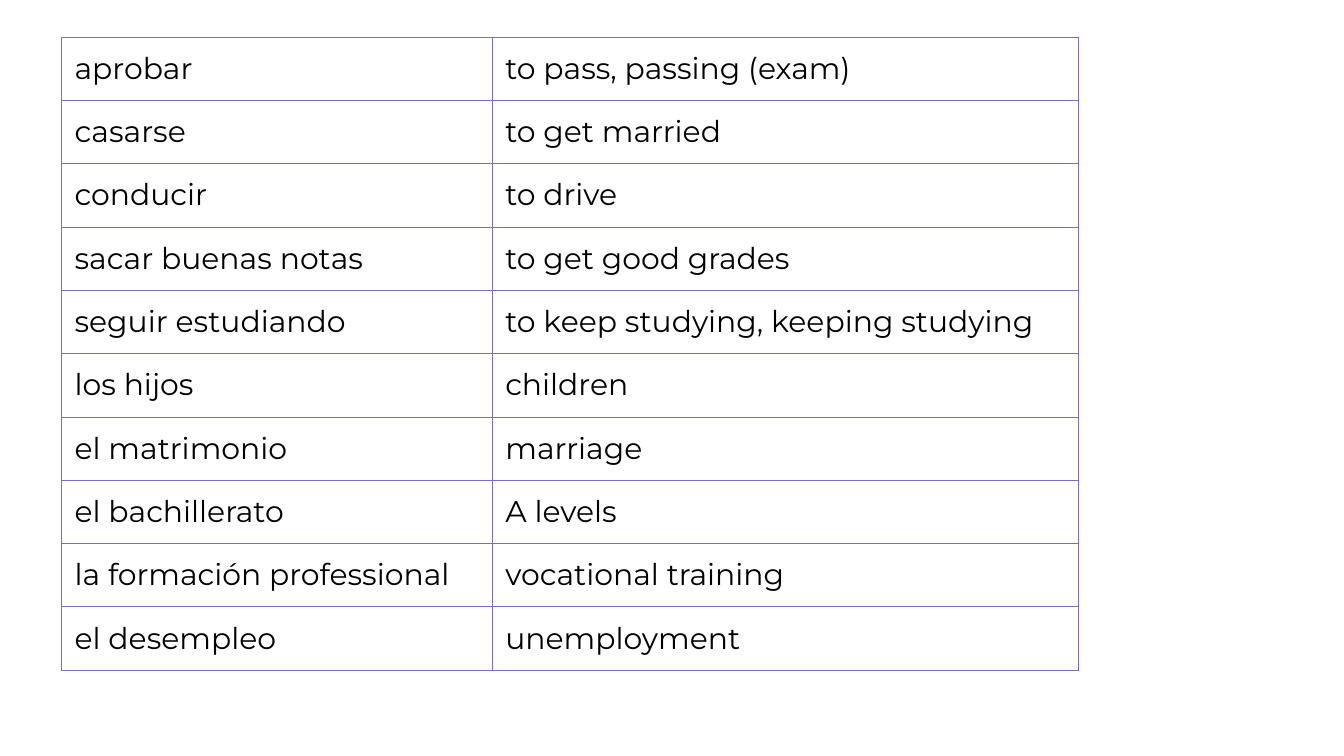
from lxml import etree
from pptx import Presentation
from pptx import util as u
from pptx.dml.color import RGBColor
from pptx.oxml import ns

SLIDE_WIDTH, SLIDE_HEIGHT = 20, 11.25
COLORS = {"text": "000000", "border": "786EC8"}
FONT, FONT_SIZE = "Montserrat", 32
TABLE_LEFT, TABLE_TOP = 0.91, 0.55
COLUMN_WIDTHS = (6.41, 8.73)
ROW_HEIGHT = 0.83
CELL_MARGIN = 0.2
BORDER_WIDTH = 0.75
VOCABULARY = [
    ("aprobar", "to pass, passing (exam)"),
    ("casarse", "to get married"),
    ("conducir", "to drive"),
    ("sacar buenas notas", "to get good grades"),
    ("seguir estudiando", "to keep studying, keeping studying"),
    ("los hijos", "children"),
    ("el matrimonio", "marriage"),
    ("el bachillerato", "A levels"),
    ("la formación professional", "vocational training"),
    ("el desempleo", "unemployment"),
]


def add_borders(cell):
    properties = cell._tc.get_or_add_tcPr()
    for side in ("lnL", "lnR", "lnT", "lnB"):
        line = etree.SubElement(properties, ns.qn(f"a:{side}"), w=str(u.Pt(BORDER_WIDTH)))
        fill = etree.SubElement(line, ns.qn("a:solidFill"))
        etree.SubElement(fill, ns.qn("a:srgbClr"), val=COLORS["border"])


def fill_cell(cell, words):
    add_borders(cell)
    cell.fill.background()
    cell.margin_left = cell.margin_right = u.Inches(CELL_MARGIN)
    cell.margin_top = cell.margin_bottom = u.Inches(CELL_MARGIN)
    cell.text_frame.text = words
    font = cell.text_frame.paragraphs[0].runs[0].font
    font.name = FONT
    font.size = u.Pt(FONT_SIZE)
    font.color.rgb = RGBColor.from_string(COLORS["text"])


def add_vocabulary_table(slide, entries):
    table = slide.shapes.add_table(
        len(entries), len(COLUMN_WIDTHS),
        u.Inches(TABLE_LEFT), u.Inches(TABLE_TOP),
        u.Inches(sum(COLUMN_WIDTHS)), u.Inches(ROW_HEIGHT * len(entries)),
    ).table
    table.first_row = False
    table.horz_banding = False
    for column, width in zip(table.columns, COLUMN_WIDTHS):
        column.width = u.Inches(width)
    for row, entry in zip(table.rows, entries):
        row.height = u.Inches(ROW_HEIGHT)
        for cell, words in zip(row.cells, entry):
            fill_cell(cell, words)


def main():
    presentation = Presentation()
    presentation.slide_width = u.Inches(SLIDE_WIDTH)
    presentation.slide_height = u.Inches(SLIDE_HEIGHT)
    slide = presentation.slides.add_slide(presentation.slide_layouts[6])
    add_vocabulary_table(slide, VOCABULARY)
    presentation.save("out.pptx")


if __name__ == "__main__":
    main()
